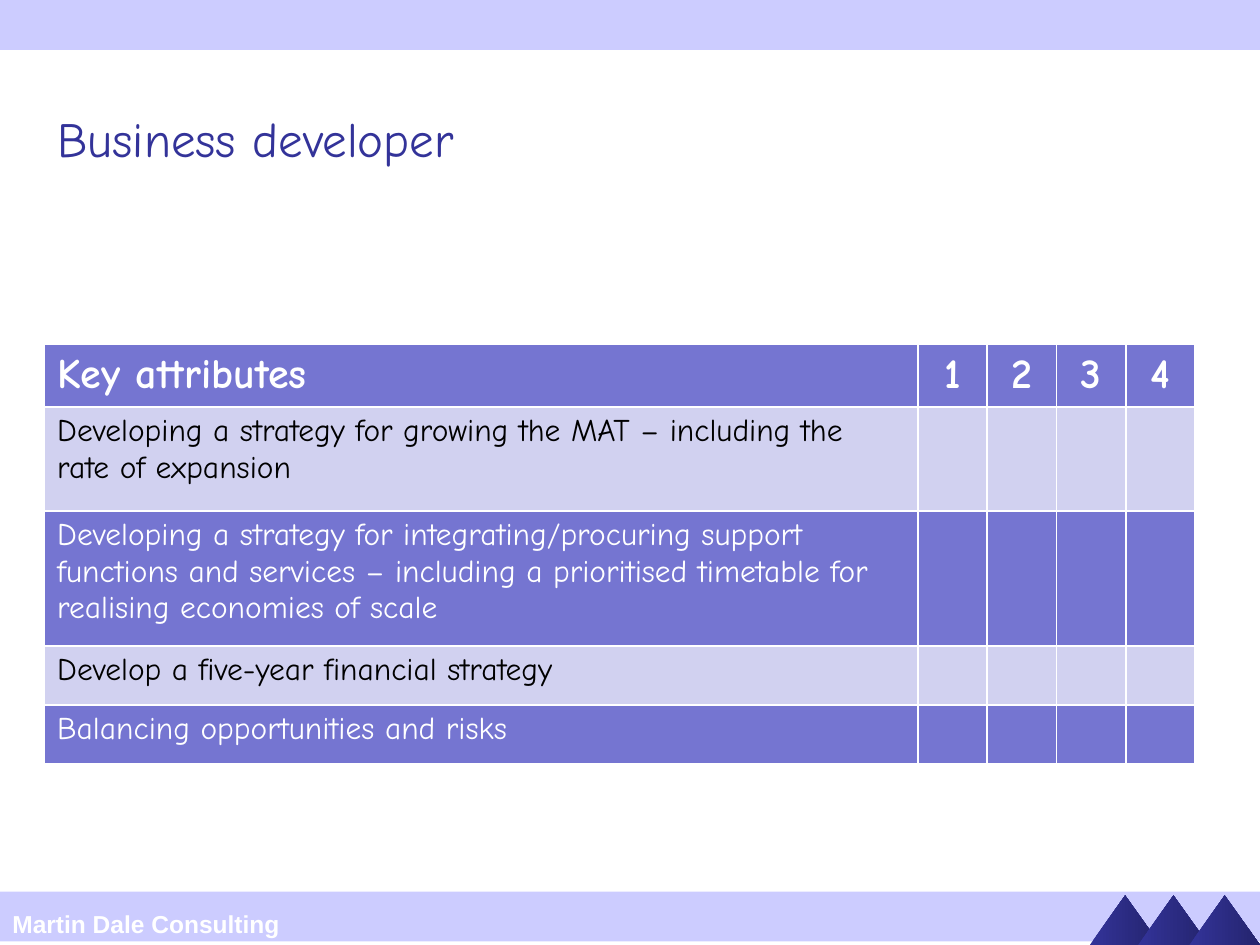
import pptx
import pptx.util
import pptx.dml.color
import pptx.enum.shapes
import pptx.enum.text
import pptx.oxml
import pptx.oxml.ns

Pt = pptx.util.Pt
ALIGN = pptx.enum.text.PP_ALIGN
ANCHOR = pptx.enum.text.MSO_ANCHOR
SHAPE = pptx.enum.shapes.MSO_SHAPE

TITLE = "Business developer"
FOOTER = "Martin Dale Consulting"
HEADINGS = ["Key attributes", "1", "2", "3", "4"]
ATTRIBUTES = [
    ("Developing a strategy for growing the MAT – including the rate of expansion", 59.4),
    ("Developing a strategy for integrating/procuring support functions and services"
     " – including a prioritised timetable for realising economies of scale", 77),
    ("Develop a five-year financial strategy", 33.7),
    ("Balancing opportunities and risks", 33.7),
]
HEADER_HEIGHT = 34.3
COLUMN_WIDTHS = [499] + [39.6] * 4

THEME = {
    "navy": "333399", "deep": "24246D", "bar": "CCCCFF",
    "band_dark": "7575D1", "band_light": "D1D1F0",
    "white": "FFFFFF", "black": "000000",
    "font": "Comic Neue", "footer_font": "Arial",
    "title_size": 28, "header_size": 24, "body_size": 18, "footer_size": 14,
}
PAGE_WIDTH, PAGE_HEIGHT = 720, 540
BAR_HEIGHT = 28.5
BAR_TOPS = [0, 509.5]
PEAK_LEFTS = [622.8, 650.4, 679.7]
PEAK_WIDTH, PEAK_HEIGHT = 40.3, 28.3


def color(name):
    return pptx.dml.color.RGBColor.from_string(THEME[name])


def add_span(para, text, size, color_name, bold=False, font="font"):
    span = para.add_run()
    span.text = text
    span.font.name = THEME[font]
    span.font.size = Pt(THEME[size])
    span.font.bold = bold
    span.font.color.rgb = color(color_name)


def add_plain_shape(page, kind, left, top, width, height):
    shape = page.shapes.add_shape(kind, Pt(left), Pt(top), Pt(width), Pt(height))
    shape.shadow.inherit = False
    shape.line.fill.background()
    return shape


def add_bars_and_peaks(page):
    for top in BAR_TOPS:
        bar = add_plain_shape(page, SHAPE.RECTANGLE, 0, top, PAGE_WIDTH, BAR_HEIGHT)
        bar.fill.solid()
        bar.fill.fore_color.rgb = color("bar")
    for left in PEAK_LEFTS:
        peak = add_plain_shape(page, SHAPE.ISOSCELES_TRIANGLE, left,
                               PAGE_HEIGHT - PEAK_HEIGHT, PEAK_WIDTH, PEAK_HEIGHT)
        peak.fill.gradient()
        peak.fill.gradient_angle = 0
        for stop, name in zip(peak.fill.gradient_stops, ["navy", "deep"]):
            stop.color.rgb = color(name)


def add_footer(page):
    box = page.shapes.add_textbox(0, Pt(516), Pt(204.5), Pt(24))
    box.text_frame.word_wrap = True
    add_span(box.text_frame.paragraphs[0], FOOTER, "footer_size", "white",
             bold=True, font="footer_font")


def fill_title(page):
    title = page.shapes.title
    title.left, title.top, title.width, title.height = Pt(25.5), Pt(43.5), Pt(694.5), Pt(71)
    title.text_frame.vertical_anchor = ANCHOR.MIDDLE
    para = title.text_frame.paragraphs[0]
    para.alignment = ALIGN.LEFT
    add_span(para, TITLE, "title_size", "navy")


def style_cell(cell, fill_name, top_width, bottom_width):
    properties = cell._tc.get_or_add_tcPr()
    for side, width in [("L", 1), ("R", 1), ("T", top_width), ("B", bottom_width)]:
        properties.append(pptx.oxml.parse_xml(
            f'<a:ln{side} {pptx.oxml.ns.nsdecls("a")} w="{int(Pt(width))}"><a:solidFill>'
            f'<a:srgbClr val="{THEME["white"]}"/></a:solidFill></a:ln{side}>'))
    cell.fill.solid()
    cell.fill.fore_color.rgb = color(fill_name)


def add_attribute_table(page):
    heights = [HEADER_HEIGHT] + [height for _, height in ATTRIBUTES]
    frame = page.shapes.add_table(len(heights), len(COLUMN_WIDTHS), Pt(25.5), Pt(196.6),
                                  Pt(sum(COLUMN_WIDTHS)), Pt(sum(heights)))
    table = frame.table
    for column, width in zip(table.columns, COLUMN_WIDTHS):
        column.width = Pt(width)
    last = len(heights) - 1
    for index, height in enumerate(heights):
        table.rows[index].height = Pt(height)
        fill_name = "band_light" if index % 2 else "band_dark"
        for cell in table.rows[index].cells:
            style_cell(cell, fill_name, 1 if index == 0 else 1.5, 1 if index == last else 1.5)

    for index, heading in enumerate(HEADINGS):
        para = table.cell(0, index).text_frame.paragraphs[0]
        para.alignment = ALIGN.CENTER if index else ALIGN.LEFT
        add_span(para, heading, "header_size", "white", bold=True)
    for index, (text, _) in enumerate(ATTRIBUTES, start=1):
        para = table.cell(index, 0).text_frame.paragraphs[0]
        add_span(para, text, "body_size", "black" if index % 2 else "white")


def main():
    deck = pptx.Presentation()
    deck.slide_width, deck.slide_height = Pt(PAGE_WIDTH), Pt(PAGE_HEIGHT)
    page = deck.slides.add_slide(deck.slide_layouts[5])
    add_bars_and_peaks(page)
    add_footer(page)
    fill_title(page)
    add_attribute_table(page)
    deck.save("out.pptx")


if __name__ == "__main__":
    main()
